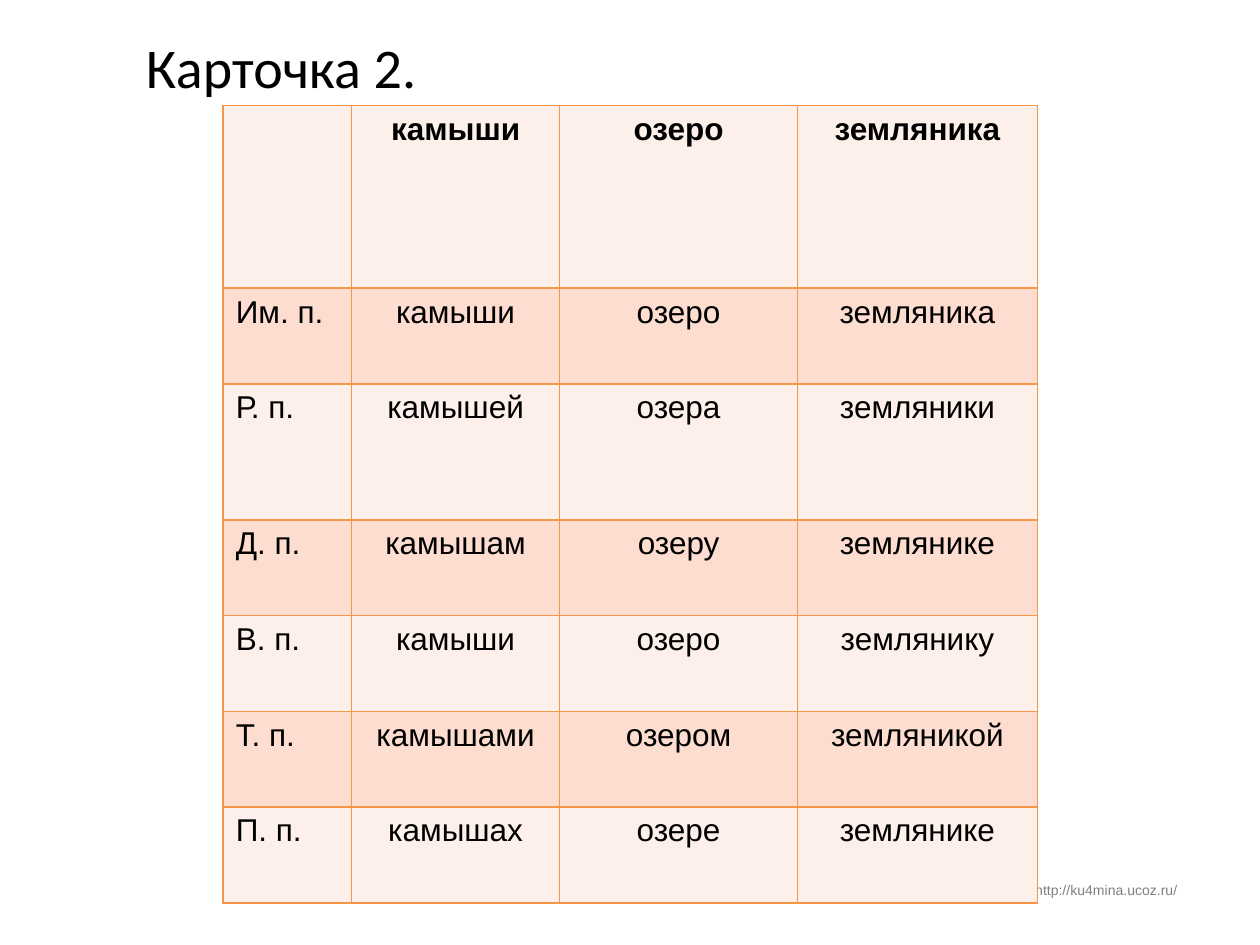
from lxml import etree
from pptx import Presentation
from pptx import util as u
from pptx.dml import color
from pptx.enum import text
from pptx.oxml import ns

ROWS = [
    ("", "камыши", "озеро", "земляника"),
    ("Им. п.", "камыши", "озеро", "земляника"),
    ("Р. п.", "камышей", "озера", "земляники"),
    ("Д. п.", "камышам", "озеру", "землянике"),
    ("В. п.", "камыши", "озеро", "землянику"),
    ("Т. п.", "камышами", "озером", "земляникой"),
    ("П. п.", "камышах", "озере", "землянике"),
]
WIDTHS = [2.59, 4.19, 4.8, 4.83]
HEIGHTS = [3.68, 1.93, 2.74] + [1.93] * 4


def rgb(code):
    return color.RGBColor.from_string(code)


class Card:
    """Draws text and tables on one slide in a shared style."""

    ink, edge = "000000", "F79646"
    bands = ("FDEFE9", "FCDDCF")

    def __init__(self, slide):
        self.slide = slide

    def style(self, para, size, face, ink=None, bold=False):
        font = para.font
        font.size, font.name, font.bold = u.Pt(size), face, bold
        font.color.rgb = rgb(ink or self.ink)

    def label(self, words, left, top, width, height, size, face, ink=None, wrap=True):
        box = self.slide.shapes.add_textbox(*map(u.Cm, (left, top, width, height)))
        box.text_frame.word_wrap = wrap
        box.text_frame.text = words
        self.style(box.text_frame.paragraphs[0], size, face, ink)
        return box

    def border(self, cell):
        props = cell._tc.get_or_add_tcPr()
        for side in ("a:lnL", "a:lnR", "a:lnT", "a:lnB"):
            line = etree.SubElement(props, ns.qn(side), w=str(u.Pt(1)))
            fill = etree.SubElement(line, ns.qn("a:solidFill"))
            etree.SubElement(fill, ns.qn("a:srgbClr"), val=self.edge)

    def table(self, rows, left, top, widths, heights):
        size = map(u.Cm, (left, top, sum(widths), sum(heights)))
        grid = self.slide.shapes.add_table(len(rows), len(widths), *size).table
        for col, width in zip(grid.columns, widths):
            col.width = u.Cm(width)
        for row, height in zip(grid.rows, heights):
            row.height = u.Cm(height)
        for r, row in enumerate(rows):
            for c, words in enumerate(row):
                cell = grid.cell(r, c)
                self.border(cell)
                cell.fill.solid()
                cell.fill.fore_color.rgb = rgb(self.bands[r % 2])
                cell.text = words
                para = cell.text_frame.paragraphs[0]
                para.alignment = text.PP_ALIGN.CENTER if c else text.PP_ALIGN.LEFT
                self.style(para, 18, "Arial", bold=r == 0)


def main():
    deck = Presentation()
    deck.slide_width, deck.slide_height = u.Cm(25.4), u.Cm(19.05)
    card = Card(deck.slides.add_slide(deck.slide_layouts[6]))
    link = card.label("http://ku4mina.ucoz.ru/", 20.62, 17.65, 3.48, 0.61,
                      8, "Arial", "808080", wrap=False)
    link.text_frame.auto_size = text.MSO_AUTO_SIZE.SHAPE_TO_FIT_TEXT
    card.table(ROWS, 4.5, 2.13, WIDTHS, HEIGHTS)
    card.label("Карточка 2.", 2.69, 0.53, 8.2, 2.01, 32, "Calibri")
    deck.save("out.pptx")


if __name__ == "__main__":
    main()
